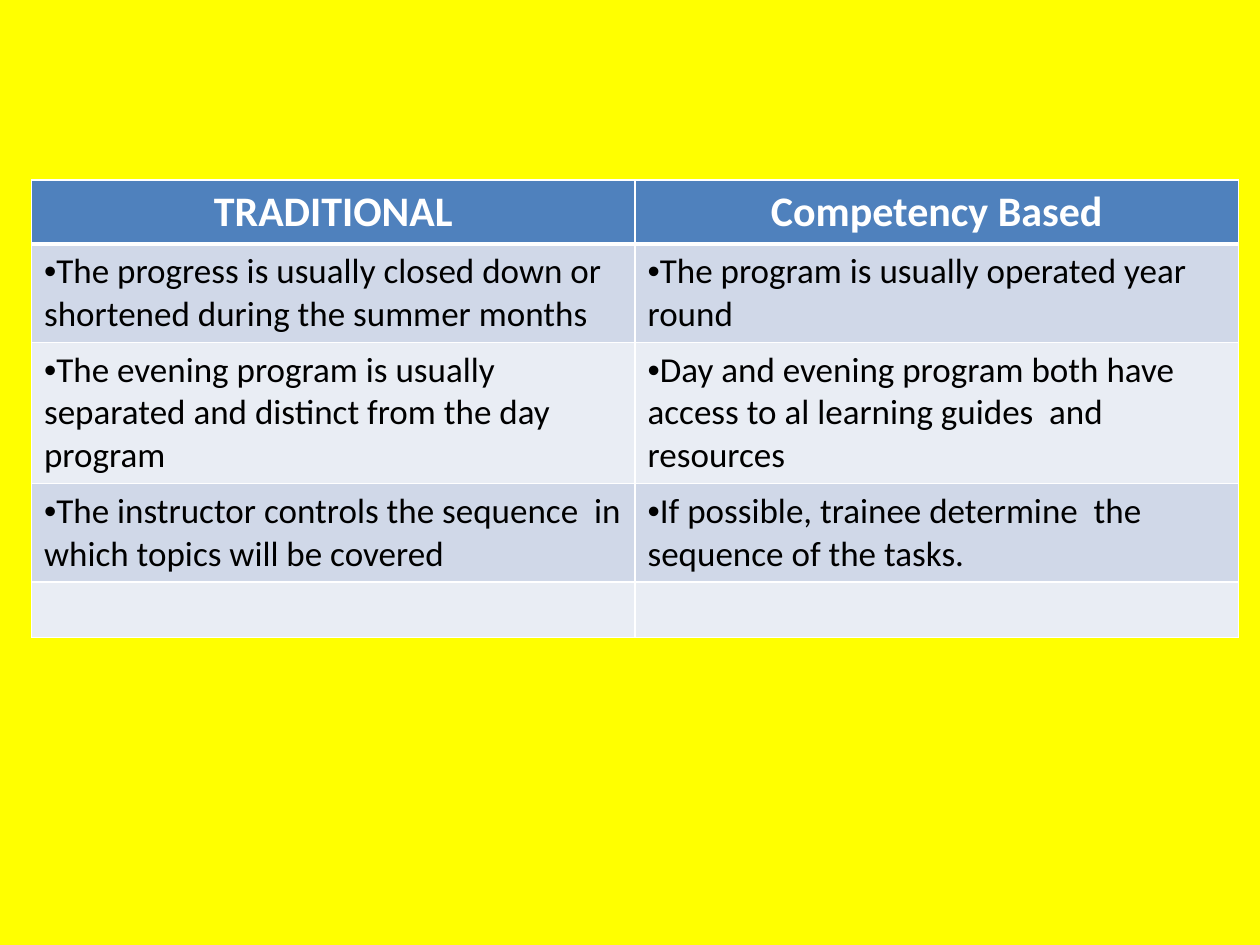
from lxml.etree import SubElement
from pptx import Presentation
from pptx.dml.color import RGBColor as RGB
from pptx.enum.text import PP_ALIGN as Align
from pptx.oxml import parse_xml
from pptx.oxml.ns import nsdecls, qn
from pptx.util import Inches, Pt

COLORS = {
    "background": "FFFF00",
    "header": "4F81BD",
    "odd_row": "D0D8E8",
    "even_row": "E9EDF4",
    "border": "FFFFFF",
    "header_text": "FFFFFF",
    "body_text": "000000",
}
FORMATS = {
    "header": {"name": "Calibri", "size": Pt(24), "bold": True},
    "body": {"name": "Calibri", "size": Pt(20), "bold": False},
}
ROWS = [
    ("TRADITIONAL", "Competency Based"),
    ("The progress is usually closed down or shortened during the summer months",
     "The program is usually operated year round"),
    ("The evening program is usually separated and distinct from the day program",
     "Day and evening program both have access to al learning guides  and resources"),
    ("The instructor controls the sequence  in which topics will be covered",
     "If possible, trainee determine  the sequence of the tasks."),
    ("", ""),
]
ROW_HEIGHTS = [0.5, 0.78, 1.12, 0.78, 0.44]
COLUMN_WIDTH = 4.79


class SlideBuilder:
    def __init__(self, presentation):
        self.slide = presentation.slides.add_slide(presentation.slide_layouts[6])

    def background(self, color):
        fill = self.slide.background.fill
        fill.solid()
        fill.fore_color.rgb = RGB.from_string(COLORS[color])

    def table(self, left, top, rows, heights, column_width):
        column_count = len(rows[0])
        frame = self.slide.shapes.add_table(
            len(rows), column_count, Inches(left), Inches(top),
            Inches(column_width * column_count), Inches(sum(heights)))
        table = frame.table
        for column in table.columns:
            column.width = Inches(column_width)
        for index, (texts, height) in enumerate(zip(rows, heights)):
            table.rows[index].height = Inches(height)
            for column, text in enumerate(texts):
                self.cell(table.cell(index, column), text, index)

    def cell(self, cell, text, row):
        is_header = row == 0
        fill_name = "header" if is_header else "odd_row" if row % 2 else "even_row"
        cell.fill.solid()
        cell.fill.fore_color.rgb = RGB.from_string(COLORS[fill_name])
        self.borders(cell, top=3 if row == 1 else 1, bottom=3 if is_header else 1)
        paragraph = cell.text_frame.paragraphs[0]
        if text:
            self.text(paragraph, text, "header" if is_header else "body")
            if is_header:
                paragraph.alignment = Align.CENTER
            else:
                self.bullet(paragraph)

    def text(self, paragraph, text, style):
        run = paragraph.add_run()
        run.text = text
        for name, value in FORMATS[style].items():
            setattr(run.font, name, value)
        run.font.color.rgb = RGB.from_string(COLORS[style + "_text"])

    def bullet(self, paragraph):
        properties = paragraph._p.get_or_add_pPr()
        SubElement(properties, qn("a:buFont"), typeface="Arial")
        SubElement(properties, qn("a:buChar"), char="•")

    def borders(self, cell, top, bottom):
        properties = cell._tc.get_or_add_tcPr()
        widths = {"lnL": 1, "lnR": 1, "lnT": top, "lnB": bottom}
        for position, (side, width) in enumerate(widths.items()):
            properties.insert(position, parse_xml(
                f'<a:{side} {nsdecls("a")} w="{Pt(width)}"><a:solidFill>'
                f'<a:srgbClr val="{COLORS["border"]}"/></a:solidFill></a:{side}>'))


def main():
    presentation = Presentation()
    presentation.slide_width = Inches(10)
    presentation.slide_height = Inches(7.5)
    builder = SlideBuilder(presentation)
    builder.background("background")
    builder.table(0.25, 1.43, ROWS, ROW_HEIGHTS, COLUMN_WIDTH)
    presentation.save("out.pptx")


if __name__ == "__main__":
    main()
